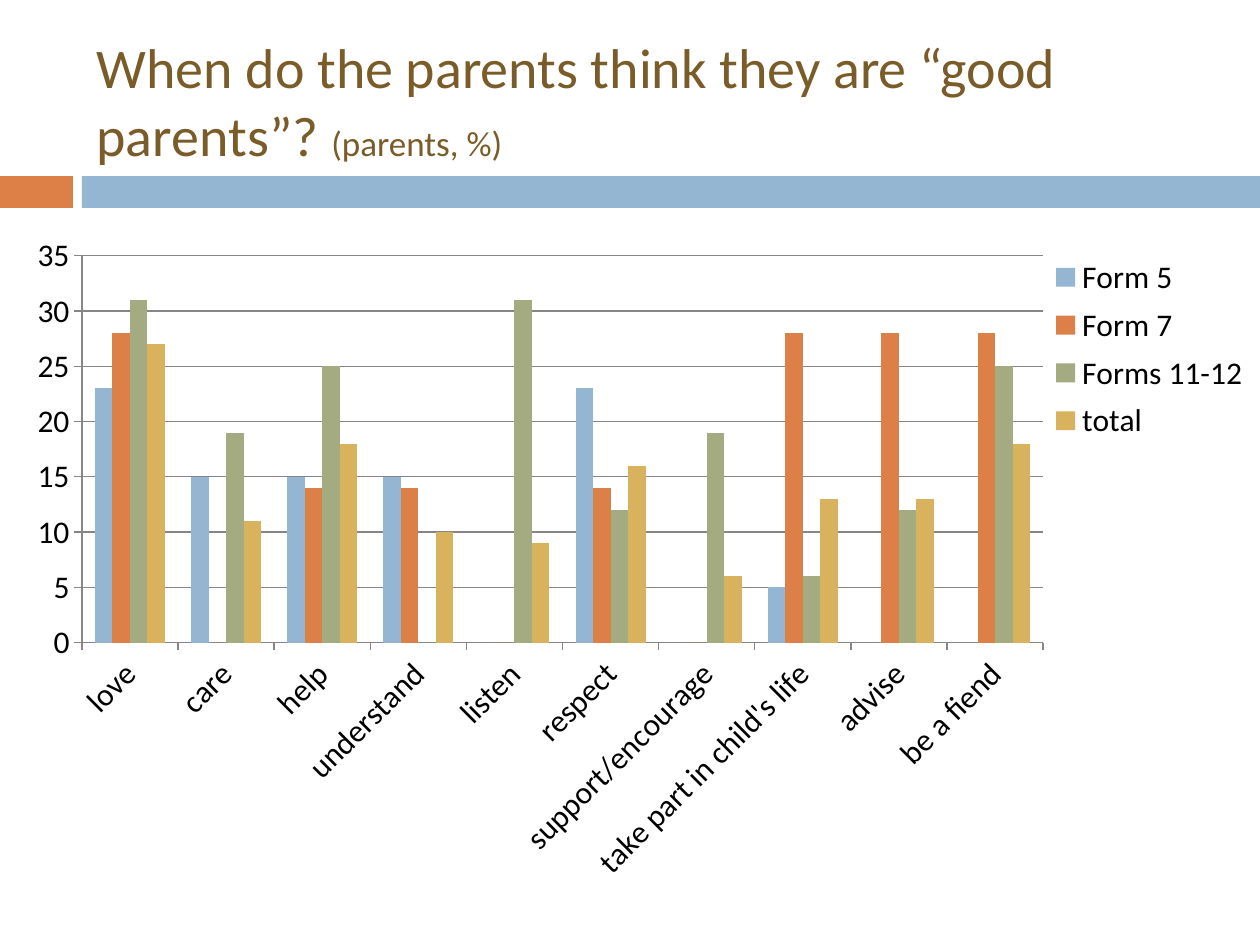
from lxml.etree import SubElement
from pptx import Presentation
from pptx.chart.data import CategoryChartData
from pptx.dml.color import RGBColor
from pptx.enum.chart import XL_CHART_TYPE, XL_LEGEND_POSITION, XL_TICK_MARK
from pptx.enum.shapes import MSO_SHAPE
from pptx.enum.text import MSO_ANCHOR, MSO_AUTO_SIZE, PP_ALIGN
from pptx.oxml.ns import qn
from pptx.util import Emu, Pt

FONT = "Calibri"
BLUE = RGBColor(0x94, 0xB6, 0xD2)
ORANGE = RGBColor(0xDD, 0x80, 0x47)
GREEN = RGBColor(0xA5, 0xAB, 0x81)
GOLD = RGBColor(0xD8, 0xB2, 0x5C)
BROWN = RGBColor(0x79, 0x5C, 0x28)
BLACK = RGBColor(0, 0, 0)
GRAY = RGBColor(0x86, 0x86, 0x86)

REASONS = ["love", "care", "help", "understand", "listen", "respect",
           "support/encourage", "take part in child's life", "advise", "be a fiend"]
ANSWERS = [
    ("Form 5", BLUE, [23, 15, 15, 15, 0, 23, 0, 5, 0, 0]),
    ("Form 7", ORANGE, [28, 0, 14, 14, 0, 14, 0, 28, 28, 28]),
    ("Forms 11-12 ", GREEN, [31, 19, 25, 0, 31, 12, 19, 6, 12, 25]),
    ("total", GOLD, [27, 11, 18, 10, 9, 16, 6, 13, 13, 18]),
]


def px(length):
    return Emu(round(length * 914400 / 126))


def box(*lengths):
    return [px(length) for length in lengths]


def set_font(font, size, color):
    font.name = FONT
    font.size = Pt(size)
    font.color.rgb = color


def add_text(paragraph, text, size=32, color=BROWN):
    run = paragraph.add_run()
    run.text = text
    set_font(run.font, size, color)


def add_band(slide, left, width, color):
    band = slide.shapes.add_shape(MSO_SHAPE.RECTANGLE, *box(left, 176, width, 32))
    band.shadow.inherit = False
    band.fill.solid()
    band.fill.fore_color.rgb = color
    band.line.fill.background()


def fill_title(title):
    title.left, title.top, title.width, title.height = box(84, 32, 1124, 136)
    frame = title.text_frame
    frame.word_wrap = True
    frame.auto_size = MSO_AUTO_SIZE.NONE
    frame.vertical_anchor = MSO_ANCHOR.MIDDLE
    heading = frame.paragraphs[0]
    heading.alignment = PP_ALIGN.LEFT
    add_text(heading, "When do the parents think they are “good parents”? ")
    add_text(heading, "(parents, %)", size=20)


def set_layout(parent, position, x, y, w, h, inner=False):
    """Place a chart part by fractions of the chart's size."""
    for old in parent.findall(qn("c:layout")):
        parent.remove(old)
    layout = SubElement(parent, qn("c:layout"))
    parent.insert(position, layout)
    manual = SubElement(layout, qn("c:manualLayout"))
    settings = [("layoutTarget", "inner")] if inner else []
    settings += [("xMode", "edge"), ("yMode", "edge"),
                 ("x", x), ("y", y), ("w", w), ("h", h)]
    for tag, value in settings:
        SubElement(manual, qn(f"c:{tag}")).set("val", str(value))


def format_axis(axis):
    axis.major_tick_mark = XL_TICK_MARK.OUTSIDE
    axis.format.line.color.rgb = GRAY
    set_font(axis.tick_labels.font, 18, BLACK)


def add_answer_chart(slide):
    data = CategoryChartData()
    data.categories = REASONS
    for name, _, values in ANSWERS:
        data.add_series(name, values)
    chart = slide.shapes.add_chart(
        XL_CHART_TYPE.COLUMN_CLUSTERED, *box(0, 227, 1260, 718), data).chart
    chart.has_title = False
    set_font(chart.font, 18, BLACK)

    # Columns
    plot = chart.plots[0]
    plot.vary_by_categories = False
    plot.gap_width = 150
    plot.overlap = 0
    for series, (_, color, _) in zip(plot.series, ANSWERS):
        series.format.fill.solid()
        series.format.fill.fore_color.rgb = color

    # Axes
    format_axis(chart.category_axis)
    labels = chart.category_axis.tick_labels.font
    labels.bold = False
    properties = chart.category_axis.format.line  # axis line stays thin
    properties.width = Pt(0.75)
    body = chart.category_axis._element.find(qn("c:txPr")).find(qn("a:bodyPr"))
    body.set("rot", "-2700000")
    body.set("vert", "horz")
    values = chart.value_axis
    format_axis(values)
    values.minimum_scale, values.maximum_scale, values.major_unit = 0, 35, 5
    values.major_gridlines.format.line.color.rgb = GRAY

    # Legend and plot positions
    chart.has_legend = True
    legend = chart.legend
    legend.position = XL_LEGEND_POSITION.RIGHT
    legend.include_in_layout = False
    set_font(legend.font, 18, BLACK)
    set_layout(legend._element, 1, 0.83, 0.03, 0.17, 0.28)
    plot_area = chart._chartSpace.chart.plotArea
    set_layout(plot_area, 0, 0.065, 0.04, 0.763, 0.539, inner=True)


def main():
    presentation = Presentation()
    presentation.slide_width, presentation.slide_height = box(1260, 945)
    slide = presentation.slides.add_slide(presentation.slide_layouts[5])

    # Header
    add_band(slide, 0, 73, ORANGE)
    add_band(slide, 82, 1178, BLUE)
    fill_title(slide.shapes.title)

    # Answers by form
    add_answer_chart(slide)
    presentation.save("out.pptx")


if __name__ == "__main__":
    main()
